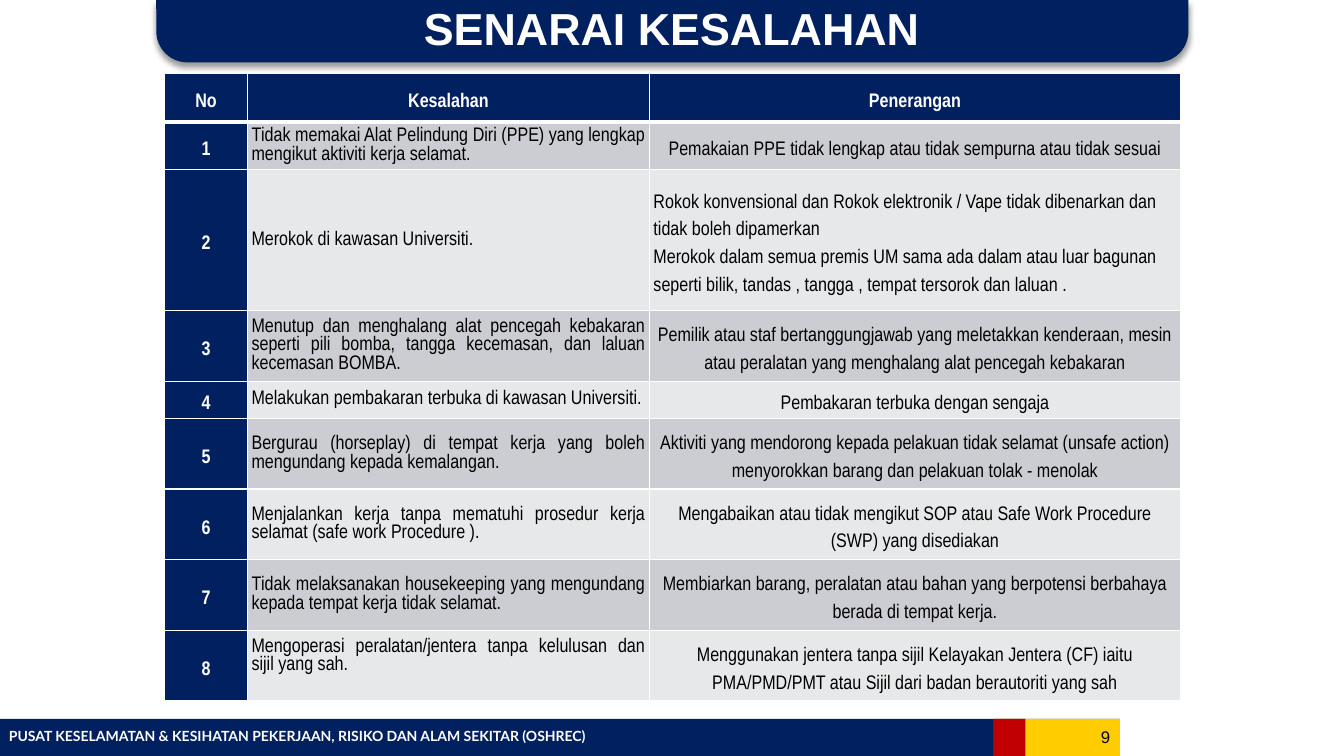
"""Build the list-of-offences slide with a banner, a table and a footer bar."""
from lxml import etree
from pptx import Presentation
from pptx import util as u
from pptx.dml.color import RGBColor
from pptx.enum import shapes, text
from pptx.oxml import ns

NAVY = RGBColor(0x00, 0x20, 0x60)
GOLD = RGBColor(0xFF, 0xCC, 0x00)
RED = RGBColor(0xC0, 0x00, 0x00)
WHITE = RGBColor(0xFF, 0xFF, 0xFF)
BLACK = RGBColor(0x00, 0x00, 0x00)
DARK_BAND = RGBColor(0xCC, 0xCD, 0xD2)
LIGHT_BAND = RGBColor(0xE7, 0xE8, 0xEA)

LEFT, CENTER, RIGHT, JUSTIFY = (
    text.PP_ALIGN.LEFT, text.PP_ALIGN.CENTER, text.PP_ALIGN.RIGHT, text.PP_ALIGN.JUSTIFY)
TOP, MIDDLE = text.MSO_ANCHOR.TOP, text.MSO_ANCHOR.MIDDLE

HEADINGS = ["No", "Kesalahan", "Penerangan"]
OFFENCES = [
    ("Tidak memakai Alat Pelindung Diri (PPE) yang lengkap mengikut aktiviti kerja selamat.",
     ["Pemakaian PPE tidak lengkap atau tidak sempurna atau tidak sesuai"]),
    ("Merokok di kawasan Universiti.",
     ["Rokok konvensional dan Rokok elektronik / Vape tidak dibenarkan dan tidak boleh dipamerkan",
      "Merokok dalam semua premis UM sama ada dalam atau luar bagunan seperti bilik, tandas , "
      "tangga , tempat tersorok dan laluan ."]),
    ("Menutup dan menghalang alat pencegah kebakaran seperti pili bomba, tangga kecemasan, "
     "dan laluan kecemasan BOMBA.",
     ["Pemilik atau staf bertanggungjawab yang meletakkan kenderaan, mesin atau peralatan "
      "yang menghalang alat pencegah kebakaran"]),
    ("Melakukan pembakaran terbuka di kawasan Universiti.",
     ["Pembakaran terbuka dengan sengaja"]),
    ("Bergurau (horseplay) di tempat kerja yang boleh mengundang kepada kemalangan.",
     ["Aktiviti yang mendorong kepada pelakuan tidak selamat (unsafe action) menyorokkan barang "
      "dan pelakuan tolak - menolak"]),
    ("Menjalankan kerja tanpa mematuhi prosedur kerja selamat (safe work Procedure ).",
     ["Mengabaikan atau tidak mengikut SOP atau Safe Work Procedure (SWP) yang disediakan"]),
    ("Tidak melaksanakan housekeeping yang mengundang kepada tempat kerja tidak selamat.",
     ["Membiarkan barang, peralatan atau bahan yang berpotensi berbahaya berada di tempat kerja."]),
    ("Mengoperasi peralatan/jentera tanpa kelulusan dan sijil yang sah.",
     ["Menggunakan jentera tanpa sijil Kelayakan Jentera (CF) iaitu PMA/PMD/PMT atau Sijil "
      "dari badan berautoriti yang sah"]),
]
COLUMN_WIDTHS = [59.2, 287.1, 379.4]
ROW_HEIGHTS = [34.8, 32.2, 96.5, 49.7, 26.6, 46.6, 46.6, 46.6, 49.7]


class Deck:
    """Hold the slide style and the current slide."""

    def __init__(self, prs):
        self.s = prs.slides.add_slide(prs.slide_layouts[5])
        self.table_font = dict(name="Arial Narrow", size=u.Pt(14))

    def paragraphs(self, tf, lines, align, font, spacing=None):
        """Fill a text frame with formatted paragraphs."""
        for i, line in enumerate(lines):
            p = tf.paragraphs[0] if i == 0 else tf.add_paragraph()
            p.alignment = align
            if spacing:
                p.line_spacing = spacing
            r = p.add_run()
            r.text = line
            for key, value in font.items():
                if key == "color":
                    r.font.color.rgb = value
                else:
                    setattr(r.font, key, value)

    def title(self, box, line, font):
        """Place and format the title placeholder."""
        sp = self.s.shapes.title
        sp.left, sp.top, sp.width, sp.height = map(u.Pt, box)
        tf = sp.text_frame
        tf.vertical_anchor = MIDDLE
        tf.auto_size = text.MSO_AUTO_SIZE.NONE
        self.paragraphs(tf, [line], CENTER, font)

    def shape(self, kind, box, fill):
        """Add a plain filled shape."""
        sp = self.s.shapes.add_shape(kind, *map(u.Pt, box))
        sp.shadow.inherit = False
        sp.fill.solid()
        sp.fill.fore_color.rgb = fill
        sp.line.fill.background()
        return sp

    def banner(self, box, fill):
        """Add the round-bottomed banner behind the title."""
        sp = self.shape(shapes.MSO_SHAPE.ROUND_2_SAME_RECTANGLE, box, fill)
        sp.rotation = 180
        sp.adjustments[0], sp.adjustments[1] = 0.5, 0
        effects = sp.element.spPr.find(ns.qn("a:effectLst"))
        shadow = etree.SubElement(effects, ns.qn("a:outerShdw"), blurRad=str(u.Pt(4)),
                                  dist=str(u.Pt(3)), dir="5400000", algn="t", rotWithShape="0")
        color = etree.SubElement(shadow, ns.qn("a:srgbClr"), val=str(BLACK))
        etree.SubElement(color, ns.qn("a:alpha"), val="40000")
        self.s.shapes.element.insert(2, sp.element)

    def label(self, box, line, align, anchor, font):
        """Add a one-line text box."""
        tf = self.s.shapes.add_textbox(*map(u.Pt, box)).text_frame
        tf.word_wrap = True
        tf.vertical_anchor = anchor
        self.paragraphs(tf, [line], align, font)

    def borders(self, cell, top, bottom):
        """Draw white borders round a cell."""
        widths = dict(lnL=1, lnR=1, lnT=top, lnB=bottom)
        tc_pr = cell._tc.get_or_add_tcPr()
        for i, (tag, width) in enumerate(widths.items()):
            ln = etree.Element(ns.qn("a:" + tag), w=str(u.Pt(width)))
            fill = etree.SubElement(ln, ns.qn("a:solidFill"))
            etree.SubElement(fill, ns.qn("a:srgbClr"), val=str(WHITE))
            tc_pr.insert(i, ln)

    def cell(self, cell, lines, row, col):
        """Fill and format one table cell."""
        dark = row == 0 or col == 0
        format_values = dict(vertical_anchor=MIDDLE, margin_left=u.Pt(2.9), margin_right=u.Pt(2.9),
                             margin_top=0, margin_bottom=0)
        if row == len(OFFENCES) and col == 1:
            format_values["margin_bottom"] = u.Pt(13.3)
        for key, value in format_values.items():
            setattr(cell, key, value)
        cell.fill.solid()
        cell.fill.fore_color.rgb = NAVY if dark else DARK_BAND if row % 2 else LIGHT_BAND
        justified = col == 1 and row > 0
        align = JUSTIFY if justified else LEFT if len(lines) > 1 else CENTER
        font = dict(self.table_font, bold=dark, color=WHITE if dark else BLACK)
        self.paragraphs(cell.text_frame, lines, align, font, 1.0 if justified else 1.5)
        self.borders(cell, 3 if row == 1 else 1, 3 if row == 0 else 1)

    def table(self, left, top, rows):
        """Add the table of offences."""
        frame = self.s.shapes.add_table(len(rows), len(COLUMN_WIDTHS), u.Pt(left), u.Pt(top),
                                        u.Pt(sum(COLUMN_WIDTHS)), u.Pt(sum(ROW_HEIGHTS)))
        for column, width in zip(frame.table.columns, COLUMN_WIDTHS):
            column.width = u.Pt(width)
        for i, (row, height) in enumerate(zip(rows, ROW_HEIGHTS)):
            frame.table.rows[i].height = u.Pt(height)
            for j, lines in enumerate(row):
                self.cell(frame.table.cell(i, j), lines, i, j)


def main():
    prs = Presentation()
    prs.slide_width, prs.slide_height = u.Pt(960), u.Pt(540)
    deck = Deck(prs)
    deck.banner((111.6, 0, 737.3, 44.6), NAVY)
    deck.title((133.9, 3.6, 691.9, 32.4), "SENARAI KESALAHAN",
               dict(name="Arial", size=u.Pt(32), bold=True, color=WHITE))
    for left, width, fill in [(0, 800, NAVY), (710, 90, GOLD), (710, 22.5, RED)]:
        deck.shape(shapes.MSO_SHAPE.RECTANGLE, (left, 513.5, width, 26.5), fill)
    deck.label((-0.7, 516.2, 668.9, 19.4),
               "PUSAT KESELAMATAN & KESIHATAN PEKERJAAN, RISIKO DAN ALAM SEKITAR (OSHREC)",
               LEFT, TOP, dict(name="Lato", size=u.Pt(10), bold=True, color=WHITE))
    deck.label((718.6, 513.5, 81.4, 25.2), "9", RIGHT, MIDDLE,
               dict(name="Arial", size=u.Pt(12), color=BLACK))
    rows = [[[heading] for heading in HEADINGS]]
    rows += [[[str(n)], [offence], details] for n, (offence, details) in enumerate(OFFENCES, 1)]
    deck.table(117.6, 52.6, rows)
    prs.save("out.pptx")


if __name__ == "__main__":
    main()
